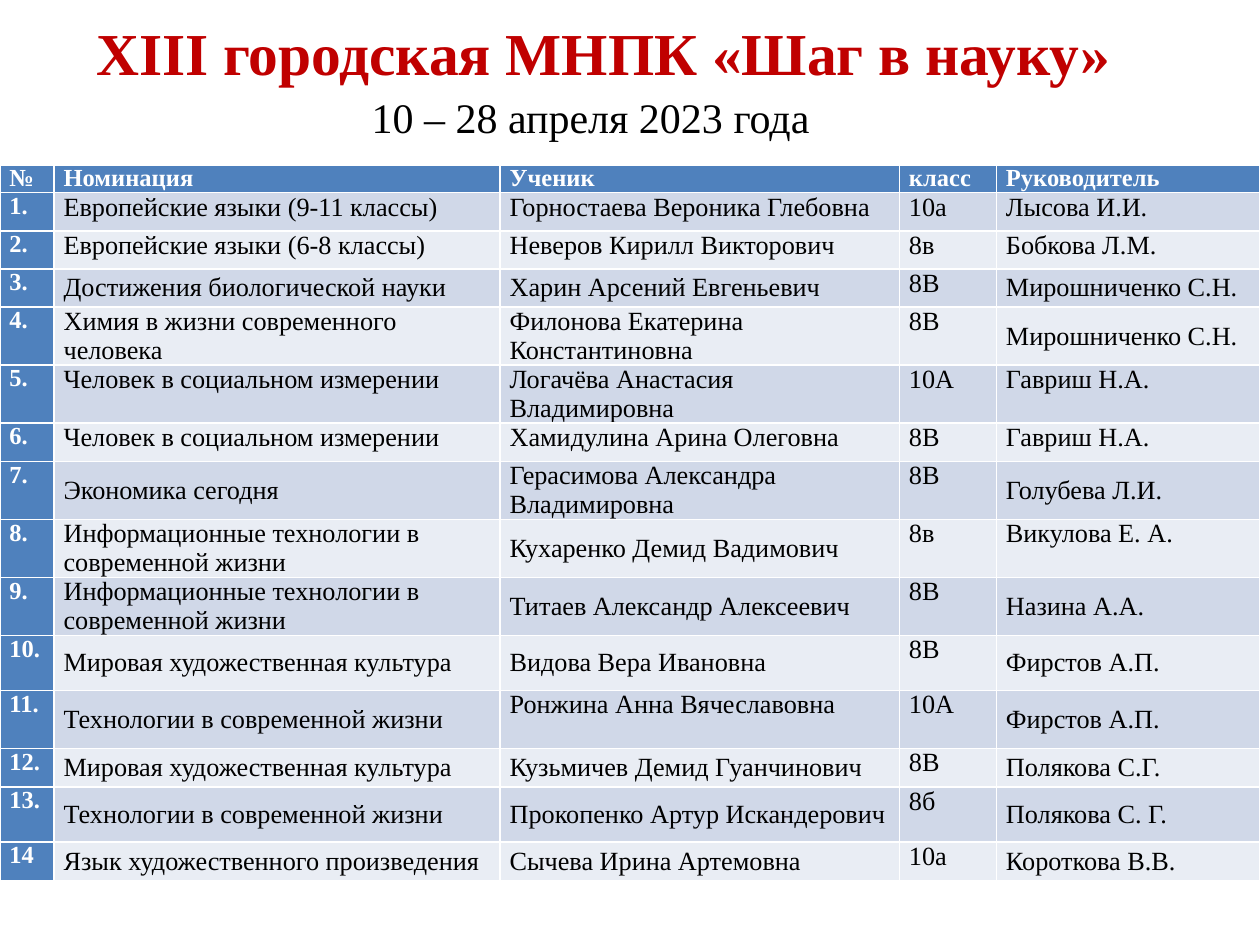
import pptx
import pptx.util
import pptx.dml.color
import pptx.enum.text

COLORS = {
    "title": "C00000", "text": "000000", "header_text": "FFFFFF",
    "header": "4F81BD", "odd_row": "D0D8E8", "even_row": "E9EDF4",
}
ANCHOR = pptx.enum.text.MSO_ANCHOR
ALIGN = pptx.enum.text.PP_ALIGN
AUTO_SIZE = pptx.enum.text.MSO_AUTO_SIZE

HEADINGS = ["№", "Номинация", "Ученик", "класс", "Руководитель"]
COLUMN_WIDTHS = [4.3, 35.4, 31.7, 7.7, 20.9]
HEADER_HEIGHT = 2.2
SINGLE, TALL, DOUBLE = 3.03, 4.4, 4.6

# Each entry: cells, row height, columns whose text is centred vertically
NAMES = (1, 2, 4)
ENTRIES = [
    (["1.", "Европейские языки (9-11 классы)", "Горностаева Вероника Глебовна", "10а", "Лысова И.И."], SINGLE, ()),
    (["2.", "Европейские языки (6-8 классы)", "Неверов Кирилл Викторович", "8в", "Бобкова Л.М."], SINGLE, ()),
    (["3.", "Достижения биологической науки", "Харин Арсений Евгеньевич", "8В", "Мирошниченко С.Н."], SINGLE, NAMES),
    (["4.", "Химия в жизни современного человека", "Филонова Екатерина Константиновна", "8В",
      "Мирошниченко С.Н."], DOUBLE, NAMES),
    (["5.", "Человек в социальном измерении", "Логачёва Анастасия Владимировна", "10А", "Гавриш Н.А."], DOUBLE, ()),
    (["6.", "Человек в социальном измерении", "Хамидулина Арина Олеговна", "8В", "Гавриш Н.А."], SINGLE, ()),
    (["7.", "Экономика сегодня", "Герасимова Александра Владимировна", "8В", "Голубева Л.И."], DOUBLE, NAMES),
    (["8.", "Информационные технологии в современной жизни", "Кухаренко Демид Вадимович", "8в",
      "Викулова Е. А."], DOUBLE, (1, 2)),
    (["9.", "Информационные технологии в современной жизни", "Титаев Александр Алексеевич", "8В",
      "Назина А.А."], DOUBLE, NAMES),
    (["10.", "Мировая художественная культура", "Видова Вера Ивановна", "8В", "Фирстов А.П."], TALL, NAMES),
    (["11.", "Технологии в современной жизни", "Ронжина Анна Вячеславовна", "10А", "Фирстов А.П."], DOUBLE, (1, 4)),
    (["12.", "Мировая художественная культура", "Кузьмичев Демид Гуанчинович", "8В", "Полякова С.Г."], SINGLE, NAMES),
    (["13.", "Технологии в современной жизни", "Прокопенко Артур Искандерович", "8б", "Полякова С. Г."], TALL, NAMES),
    (["14", "Язык художественного произведения", "Сычева Ирина Артемовна", "10а", "Короткова В.В."], SINGLE, NAMES),
]


class SlideBuilder:
    """Draws on one slide; lengths are units of a 100 by 75 grid."""

    font = "Times New Roman"

    def __init__(self, presentation):
        self.unit = presentation.slide_width / 100
        self.slide = presentation.slides.add_slide(presentation.slide_layouts[5])

    def length(self, units):
        return pptx.util.Emu(round(units * self.unit))

    def color(self, name):
        return pptx.dml.color.RGBColor.from_string(COLORS[name])

    def run(self, paragraph, text, size, color, bold=False):
        run = paragraph.add_run()
        run.text = text
        run.font.name = self.font
        run.font.size = pptx.util.Pt(size)
        run.font.bold = bold
        run.font.color.rgb = self.color(color)

    def title(self, text, left, top, width, height):
        shape = self.slide.shapes.title
        shape.left, shape.top = self.length(left), self.length(top)
        shape.width, shape.height = self.length(width), self.length(height)
        frame = shape.text_frame
        frame.auto_size = AUTO_SIZE.NONE
        frame.vertical_anchor = ANCHOR.MIDDLE
        paragraph = frame.paragraphs[0]
        paragraph.alignment = ALIGN.CENTER
        paragraph.line_spacing = 0.9
        paragraph.space_after = pptx.util.Pt(6)
        self.run(paragraph, text, 34, "title", bold=True)

    def text(self, text, left, top, width, height):
        shape = self.slide.shapes.add_textbox(*map(self.length, (left, top, width, height)))
        frame = shape.text_frame
        frame.word_wrap = True
        frame.auto_size = AUTO_SIZE.SHAPE_TO_FIT_TEXT
        self.run(frame.paragraphs[0], text, 24, "text")

    def cell(self, cell, text, fill, heading, centred):
        cell.fill.solid()
        cell.fill.fore_color.rgb = self.color(fill)
        cell.margin_left, cell.margin_right = self.length(0.75), self.length(0.4)
        cell.margin_top = cell.margin_bottom = 0
        cell.vertical_anchor = ANCHOR.MIDDLE if centred else ANCHOR.TOP
        size, color = (14, "header_text") if heading else (15, "text")
        self.run(cell.text_frame.paragraphs[0], text, size, color, bold=heading)

    def table(self, left, top):
        rows = [(HEADINGS, HEADER_HEIGHT, ()), *ENTRIES]
        width, height = sum(COLUMN_WIDTHS), sum(row[1] for row in rows)
        table = self.slide.shapes.add_table(
            len(rows), len(HEADINGS), *map(self.length, (left, top, width, height))).table
        table.first_col = True
        for column, column_width in zip(table.columns, COLUMN_WIDTHS):
            column.width = self.length(column_width)
        for row_index, (texts, row_height, centred) in enumerate(rows):
            table.rows[row_index].height = self.length(row_height)
            band = "odd_row" if row_index % 2 else "even_row"
            for column_index, text in enumerate(texts):
                heading = row_index == 0 or column_index == 0
                self.cell(table.cell(row_index, column_index), text,
                          "header" if heading else band, heading, column_index in centred)


def main():
    presentation = pptx.Presentation()
    presentation.slide_width = pptx.util.Inches(10)
    presentation.slide_height = pptx.util.Inches(7.5)
    builder = SlideBuilder(presentation)
    builder.title("XIII городская МНПК «Шаг в науку» ", 3.5, 0.1, 90, 8.8)
    builder.table(0, 13.1)
    builder.text("10 – 28 апреля 2023 года", 28.5, 6.8, 40.2, 5)
    presentation.save("out.pptx")


if __name__ == "__main__":
    main()
